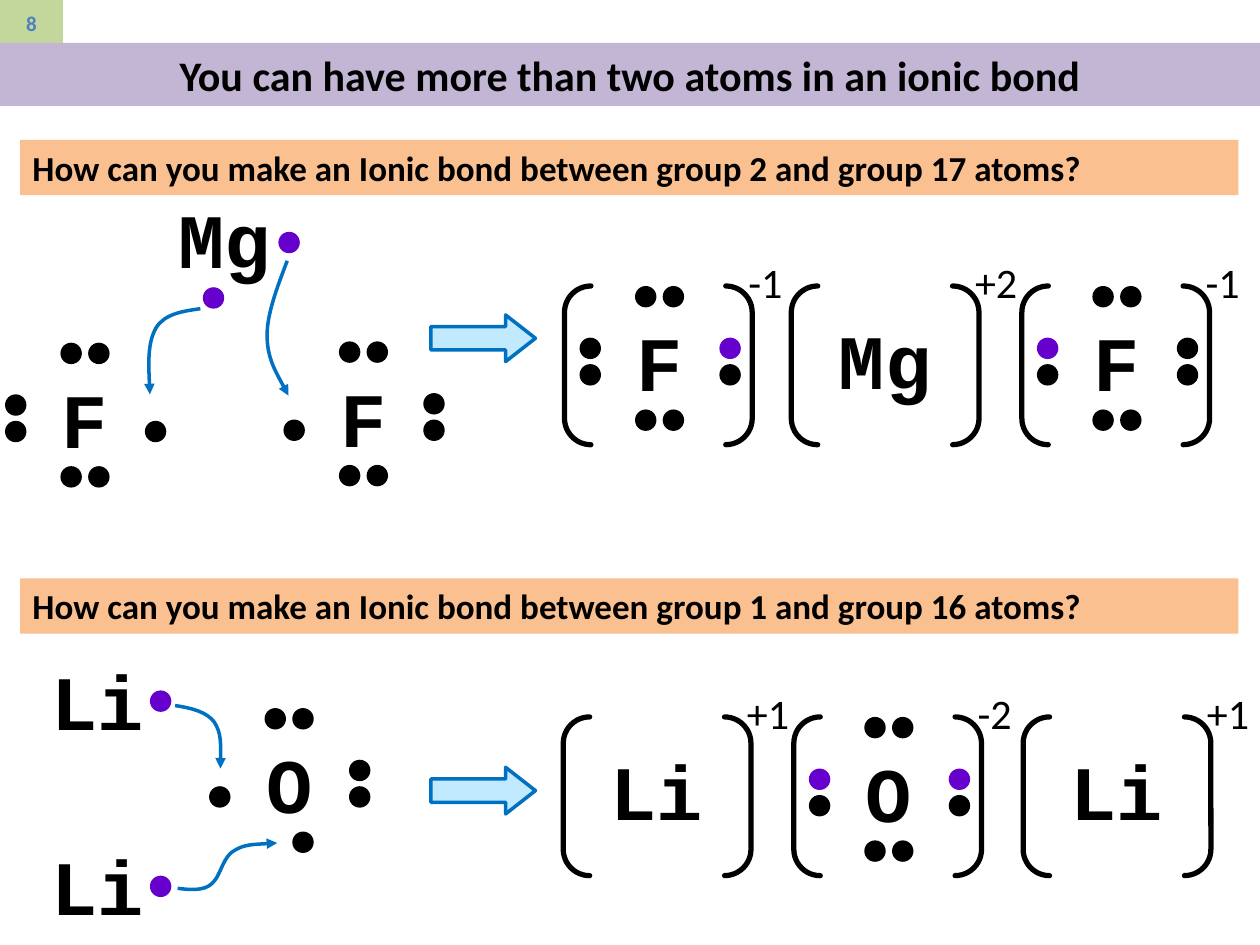
from typing import NamedTuple

from lxml import etree
from pptx import Presentation
from pptx.dml.color import RGBColor
from pptx.enum.shapes import MSO_SHAPE
from pptx.enum.text import MSO_ANCHOR, MSO_AUTO_SIZE, PP_ALIGN
from pptx.oxml.ns import qn
from pptx.util import Inches, Pt

RECT, OVAL = MSO_SHAPE.RECTANGLE, MSO_SHAPE.OVAL
ARROW, BRACKETS = MSO_SHAPE.RIGHT_ARROW, MSO_SHAPE.DOUBLE_BRACKET
LEFT, CENTER = PP_ALIGN.LEFT, PP_ALIGN.CENTER
TOP, MIDDLE = MSO_ANCHOR.TOP, MSO_ANCHOR.MIDDLE
FIT = MSO_AUTO_SIZE.SHAPE_TO_FIT_TEXT

COLORS = {
    "black": "000000", "purple": "6600CC", "blue": "0070C0", "pale_blue": "C1EAFF",
    "green": "C3D69B", "lilac": "C3B6D4", "orange": "FAC090", "number": "4F81BD",
}
DOT = 0.17
DOT_COLORS = {"k": "black", "p": "purple"}
#_SLOTS order: top pair, left pair, right pair, bottom pair
SLOTS = [(0.36, -0.18), (0.58, -0.18), (-0.08, 0.23), (-0.08, 0.44),
         (1.03, 0.23), (1.03, 0.44), (0.36, 0.8), (0.58, 0.8)]
BRACKET_W, BRACKET_H = 1.49, 1.26


class Banner(NamedTuple):
    y: float
    text: str


class Atom(NamedTuple):
    x: float
    y: float
    symbol: str
    dots: str = ""


class Ion(NamedTuple):
    x: float
    y: float
    symbol: str
    charge: str
    dots: str = ""


BANNERS = [
    Banner(1.11, "How can you make an Ionic bond between group 2 and group 17 atoms?"),
    Banner(4.59, "How can you make an Ionic bond between group 1 and group 16 atoms?"),
]
ATOMS = [
    Atom(1.28, 1.47, "Mg"), Atom(0.27, 5.14, "Li"), Atom(0.27, 6.61, "Li"),
    Atom(2.33, 2.89, "F", "kk.kkkkk"), Atom(0.12, 2.9, "F", "kkkk.kkk"),
    Atom(1.74, 5.8, "O", "kk.kkk.k"),
]
FREE_ELECTRONS = [(1.61, 2.28), (2.21, 1.84), (1.19, 5.48), (1.19, 6.95)]
IONS = [
    Ion(4.48, 2.27, "F", "-1", "kkkkpkkk"),
    Ion(6.28, 2.27, "Mg", "+2"),
    Ion(8.11, 2.27, "F", "-1", "kkpkkkkk"),
    Ion(4.47, 5.69, "Li", "+1"),
    Ion(6.3, 5.69, "O", "-2", "kkpkpkkk"),
    Ion(8.12, 5.69, "Li", "+1"),
]
TRANSFERS = [
    [(1.59, 2.45), (1.45, 2.47), (1.31, 2.49), (1.24, 2.6),
     (1.17, 2.72), (1.18, 2.93), (1.19, 3.13)],
    [(2.28, 2.07), (2.2, 2.28), (2.12, 2.49), (2.12, 2.66),
     (2.12, 2.84), (2.21, 2.99), (2.29, 3.14)],
    [(1.39, 5.6), (1.52, 5.62), (1.64, 5.65), (1.7, 5.73),
     (1.76, 5.82), (1.75, 5.96), (1.75, 6.1)],
    [(1.41, 7.05), (1.63, 7.08), (1.67, 7.03), (1.71, 6.98), (1.75, 6.93),
     (1.78, 6.79), (1.86, 6.75), (1.94, 6.7), (2.06, 6.7), (2.2, 6.69)],
]


def rgb(name: str) -> RGBColor:
    return RGBColor.from_string(COLORS[name])


def write(sp, text: str, size: int, font="Calibri", color="black",
          bold=True, align=CENTER, anchor=TOP) -> None:
    tf = sp.text_frame
    tf.word_wrap = True
    tf.vertical_anchor = anchor
    if anchor == TOP:
        tf.auto_size = FIT
    p = tf.paragraphs[0]
    p.text = text
    p.alignment = align
    r = p.runs[0]
    r.font.name, r.font.size, r.font.bold = font, Pt(size), bold
    r.font.color.rgb = rgb(color)


def style(sp, fill="", line="", width=2) -> None:
    sp.shadow.inherit = False
    if fill:
        sp.fill.solid()
        sp.fill.fore_color.rgb = rgb(fill)
    else:
        sp.fill.background()
    if line:
        sp.line.color.rgb = rgb(line)
        sp.line.width = Pt(width)
    else:
        sp.line.fill.background()


def add_shape(s, kind, x: float, y: float, w: float, h: float, fill="", line="", width=2):
    sp = s.shapes.add_shape(kind, Inches(x), Inches(y), Inches(w), Inches(h))
    style(sp, fill, line, width)
    return sp


def add_label(s, x: float, y: float, w: float, h: float):
    return s.shapes.add_textbox(Inches(x), Inches(y), Inches(w), Inches(h))


def add_atom(s, atom: Atom) -> None:
    w = 1.11 if len(atom.symbol) == 1 else 1.01
    write(add_label(s, atom.x, atom.y, w, 0.84), atom.symbol, 44, "Courier New")
    for (dx, dy), key in zip(SLOTS, atom.dots):
        if key in DOT_COLORS:
            add_shape(s, OVAL, atom.x + dx, atom.y + dy, DOT, DOT, DOT_COLORS[key])


def add_ion(s, ion: Ion) -> None:
    dx, dy = (0.2, 0.18) if len(ion.symbol) == 1 else (0.24, 0.16)
    add_atom(s, Atom(ion.x + dx, ion.y + dy, ion.symbol, ion.dots))
    sp = add_shape(s, BRACKETS, ion.x, ion.y, BRACKET_W, BRACKET_H, line="black", width=3)
    sp.line._get_or_add_ln().set("cap", "rnd")
    label = add_label(s, ion.x + 1.36, ion.y - 0.28, 0.62, 0.5)
    write(label, ion.charge, 24, bold=False, align=LEFT)


def add_transfer(s, points: list[tuple[float, float]]) -> None:
    start, *rest = [(Inches(x), Inches(y)) for x, y in points]
    builder = s.shapes.build_freeform(*start)
    builder.add_line_segments(rest, close=False)
    sp = builder.convert_to_shape()
    style(sp, line="blue")
    segments = list(sp._element.iter(qn("a:lnTo")))
    outline = segments[0].getparent()
    for i in range(0, len(segments), 3):
        curve = etree.SubElement(outline, qn("a:cubicBezTo"))
        for segment in segments[i:i + 3]:
            curve.append(segment[0])
            outline.remove(segment)
    etree.SubElement(sp.line._get_or_add_ln(), qn("a:tailEnd"), type="triangle")


def main() -> None:
    """Build the slide on ionic bonds between more than two atoms."""
    prs = Presentation()
    prs.slide_width, prs.slide_height = Inches(10), Inches(7.5)
    s = prs.slides.add_slide(prs.slide_layouts[6])

    number = add_shape(s, RECT, 0, 0, 0.5, 0.36, "green")
    write(number, "8", 12, color="number", anchor=MIDDLE)
    title = add_shape(s, RECT, 0, 0.34, 10, 0.5, "lilac")
    write(title, "You can have more than two atoms in an ionic bond", 24)
    for banner in BANNERS:
        sp = add_shape(s, RECT, 0.16, banner.y, 9.67, 0.44, "orange")
        write(sp, banner.text, 20, align=LEFT)
    for y in (2.5, 6.09):
        sp = add_shape(s, ARROW, 3.42, y, 0.83, 0.37, "pale_blue", "blue")
        sp.adjustments[1] = 0.64

    for atom in ATOMS:
        add_atom(s, atom)
    for x, y in FREE_ELECTRONS:
        add_shape(s, OVAL, x, y, DOT, DOT, "purple")
    for ion in IONS:
        add_ion(s, ion)
    for points in TRANSFERS:
        add_transfer(s, points)
    prs.save("out.pptx")


if __name__ == "__main__":
    main()
